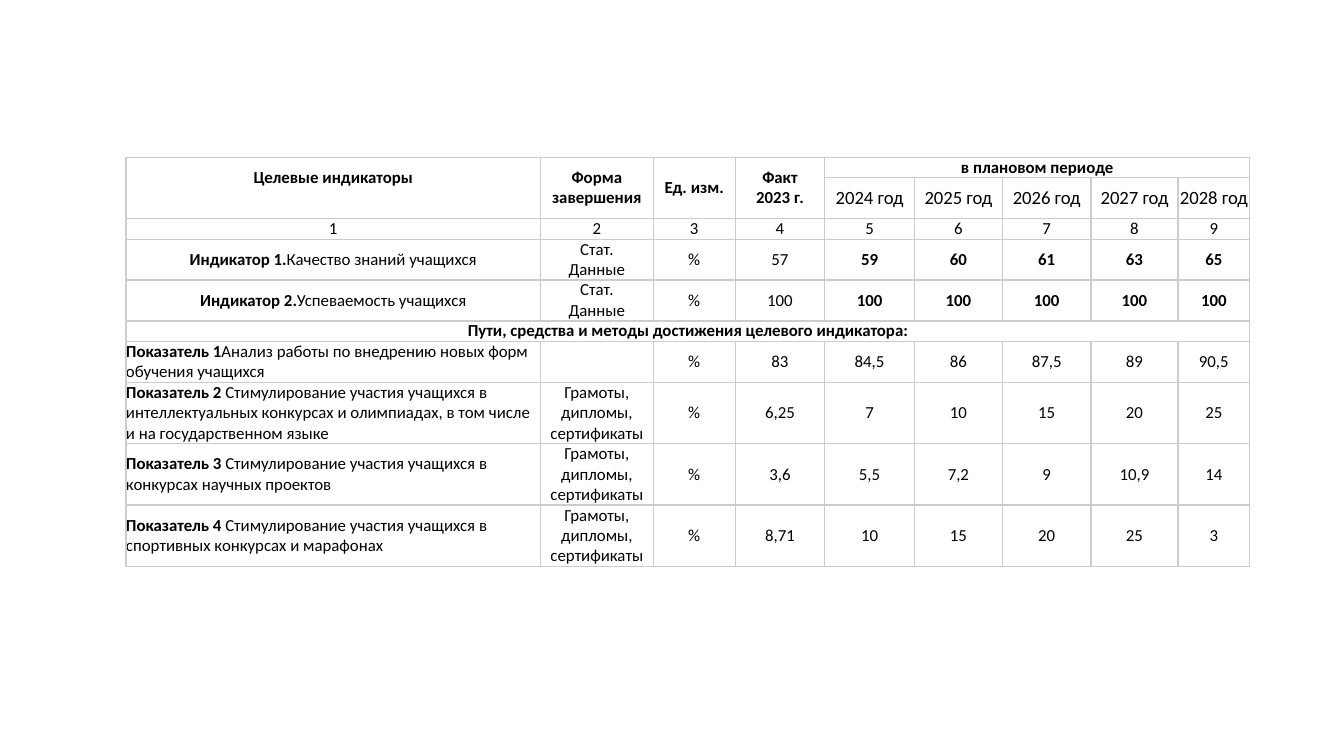
from dataclasses import dataclass

from lxml import etree
from pptx import Presentation
from pptx.dml.color import RGBColor
from pptx.enum.text import MSO_ANCHOR, PP_ALIGN
from pptx.oxml.ns import qn
from pptx.util import Pt

CENTER, LEFT = PP_ALIGN.CENTER, PP_ALIGN.LEFT
MIDDLE = MSO_ANCHOR.MIDDLE


@dataclass(frozen=True)
class Theme:
    font: str = "Calibri"
    text: str = "000000"
    border: str = "CCCCCC"
    border_width: float = 0.75
    body: float = 9
    year: float = 10


THEME = Theme()

# Table geometry in points; row heights follow the number of text lines
TABLE_LEFT, TABLE_TOP = 67.5, 84.2
COLUMN_WIDTHS = [222, 60.5, 43.9, 48, 48, 47.2, 47.4, 46.7, 38.3]
ROW_LINES = [1, 2, 1, 2, 2, 1, 2, 3, 3, 3]
LINE_HEIGHT = 10.8

HEADINGS = ["Целевые индикаторы", "Форма завершения", "Ед. изм.", "Факт\n2023 г."]
FIRST_YEAR, YEAR_COUNT = 2024, 5
PLAN_HEADING = "в плановом периоде"
SECTION_HEADING = "Пути, средства и методы достижения целевого индикатора:"
SECTION_ROW = 5
STATISTICS = "Стат.\nДанные"
AWARDS = "Грамоты, дипломы, сертификаты"

# Bold lead, description, form of completion, actual value and plan values
INDICATORS = [
    ("Индикатор 1.", "Качество знаний учащихся", STATISTICS,
     ["57", "59", "60", "61", "63", "65"]),
    ("Индикатор 2.", "Успеваемость учащихся", STATISTICS,
     ["100", "100", "100", "100", "100", "100"]),
]
MEASURES = [
    ("Показатель 1", "Анализ работы по внедрению новых форм обучения учащихся", "",
     ["83", "84,5", "86", "87,5", "89", "90,5"]),
    ("Показатель 2 ", "Стимулирование участия учащихся в интеллектуальных "
     "конкурсах и олимпиадах, в том числе и на государственном языке", AWARDS,
     ["6,25", "7", "10", "15", "20", "25"]),
    ("Показатель 3 ", "Стимулирование участия учащихся в конкурсах научных проектов",
     AWARDS, ["3,6", "5,5", "7,2", "9", "10,9", "14"]),
    ("Показатель 4 ", "Стимулирование участия учащихся в спортивных конкурсах "
     "и марафонах", AWARDS, ["8,71", "10", "15", "20", "25", "3"]),
]


def add_run(paragraph, text, bold=False, size=THEME.body):
    run = paragraph.add_run()
    run.text = text
    for attribute, value in dict(name=THEME.font, size=Pt(size), bold=bold).items():
        setattr(run.font, attribute, value)
    run.font.color.rgb = RGBColor.from_string(THEME.text)


def write_cell(cell, text, bold=False, size=THEME.body):
    """Write centred text, one paragraph for each line."""
    for index, line in enumerate(text.split("\n")):
        frame = cell.text_frame
        paragraph = frame.paragraphs[0] if index == 0 else frame.add_paragraph()
        paragraph.alignment = CENTER
        if line:
            add_run(paragraph, line, bold, size)


def format_cell(cell):
    layout = dict(margin_left=0, margin_right=0, margin_top=0, margin_bottom=0,
                  vertical_anchor=MIDDLE)
    for attribute, value in layout.items():
        setattr(cell, attribute, value)
    properties = cell._tc.get_or_add_tcPr()
    for side in ("a:lnL", "a:lnR", "a:lnT", "a:lnB"):
        line = etree.SubElement(properties, qn(side), w=str(Pt(THEME.border_width)))
        fill = etree.SubElement(line, qn("a:solidFill"))
        etree.SubElement(fill, qn("a:srgbClr"), val=THEME.border)
    cell.fill.background()


def add_grid(slide):
    heights = [lines * LINE_HEIGHT for lines in ROW_LINES]
    table = slide.shapes.add_table(
        len(heights), len(COLUMN_WIDTHS), Pt(TABLE_LEFT), Pt(TABLE_TOP),
        Pt(sum(COLUMN_WIDTHS)), Pt(sum(heights))).table
    table.first_row = table.horz_banding = False
    for column, width in zip(table.columns, COLUMN_WIDTHS):
        column.width = Pt(width)
    for row, height in zip(table.rows, heights):
        row.height = Pt(height)
    for cell in table.iter_cells():
        format_cell(cell)
    return table


def fill_header(table):
    for column, heading in enumerate(HEADINGS):
        cell = table.cell(0, column)
        cell.merge(table.cell(1, column))
        write_cell(cell, heading, bold=True)
    # The first heading sits one line higher than the others
    table.cell(0, 0).margin_bottom = Pt(11)

    first_plan = len(HEADINGS)
    plan = table.cell(0, first_plan)
    plan.merge(table.cell(0, first_plan + YEAR_COUNT - 1))
    write_cell(plan, PLAN_HEADING, bold=True)
    for offset in range(YEAR_COUNT):
        write_cell(table.cell(1, first_plan + offset),
                   f"{FIRST_YEAR + offset} год", size=THEME.year)
    for column in range(len(COLUMN_WIDTHS)):
        write_cell(table.cell(2, column), str(column + 1))


def fill_rows(table, first_row, records, label_alignment, bold_plan):
    for row, (lead, description, form, values) in enumerate(records, first_row):
        label = table.cell(row, 0).text_frame.paragraphs[0]
        label.alignment = label_alignment
        add_run(label, lead, bold=True)
        add_run(label, description)
        for column, text in enumerate([form, "%", *values], 1):
            is_plan = column >= len(HEADINGS)
            write_cell(table.cell(row, column), text, bold=bold_plan and is_plan)


def fill_section(table):
    section = table.cell(SECTION_ROW, 0)
    section.merge(table.cell(SECTION_ROW, len(COLUMN_WIDTHS) - 1))
    write_cell(section, SECTION_HEADING, bold=True)


def main():
    presentation = Presentation()
    presentation.slide_width, presentation.slide_height = Pt(720), Pt(405)
    slide = presentation.slides.add_slide(presentation.slide_layouts[6])

    # Table of target indicators, then of the measures that serve them
    table = add_grid(slide)
    fill_header(table)
    fill_rows(table, 3, INDICATORS, CENTER, bold_plan=True)
    fill_section(table)
    fill_rows(table, SECTION_ROW + 1, MEASURES, LEFT, bold_plan=False)

    presentation.save("out.pptx")


if __name__ == "__main__":
    main()
